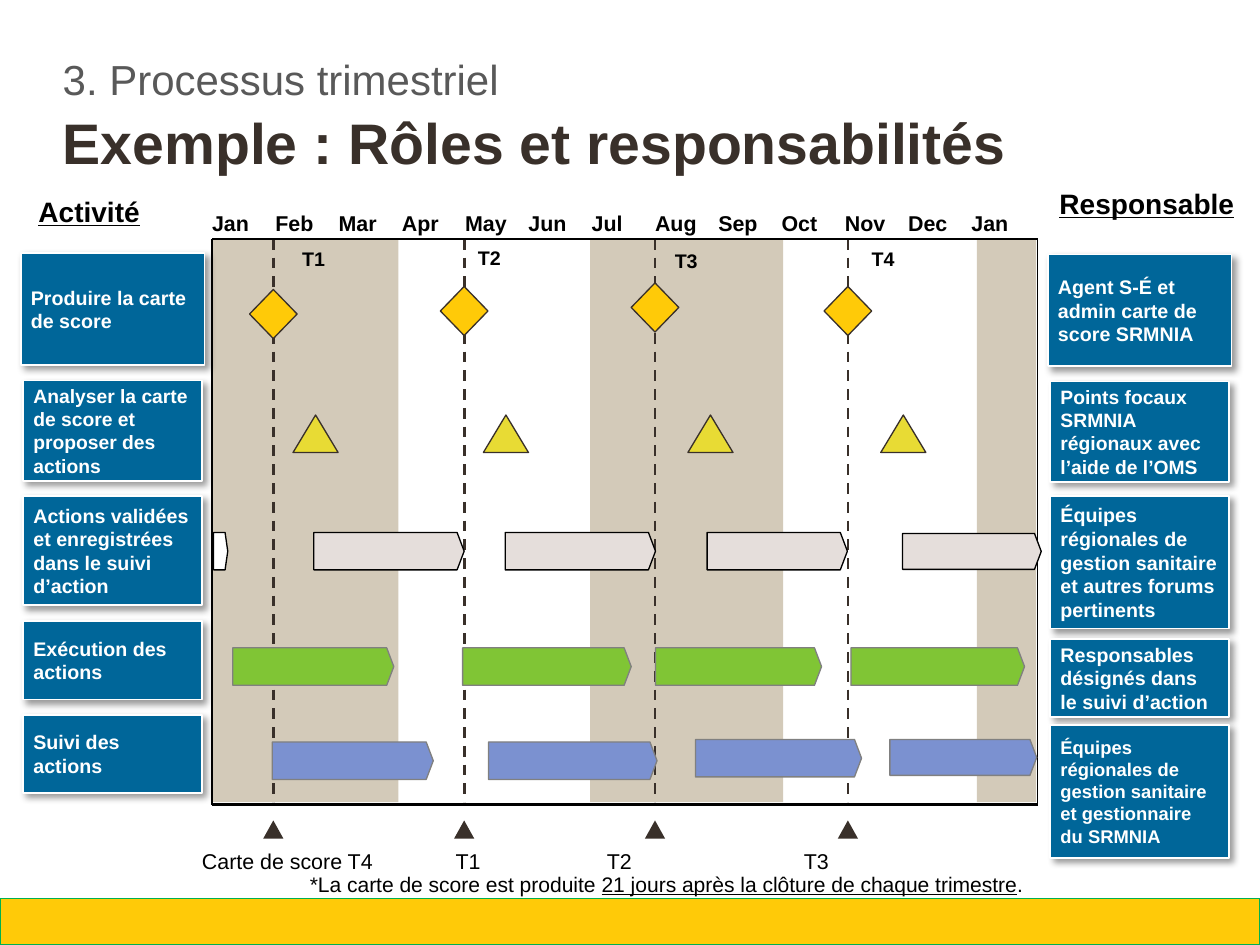
from dataclasses import dataclass
from typing import Optional

import pptx
import pptx.dml.color
import pptx.enum.dml
import pptx.enum.shapes
import pptx.enum.text
import pptx.oxml
import pptx.oxml.ns
import pptx.util
from lxml import etree

Cm = pptx.util.Cm
Pt = pptx.util.Pt
Shape = pptx.enum.shapes.MSO_SHAPE
Align = pptx.enum.text.PP_ALIGN
Anchor = pptx.enum.text.MSO_ANCHOR

FONT = "Arial"
BLACK, WHITE, DARK = "000000", "FFFFFF", "39302A"
GOLD, BLUE, BEIGE, GREY = "FFCA08", "006699", "D3CAB9", "808080"
CHART_LEFT, CHART_RIGHT, CHART_TOP, CHART_BOTTOM = 4.19, 20.5, 4.72, 15.9
MONTH_STEP = 1.25
MONTHS = "Jan Feb Mar Apr May Jun Jul Aug Sep Oct Nov Dec Jan".split()


@dataclass
class Card:
    left: float
    top: float
    width: float
    height: float
    text: str
    size: float = 11


@dataclass
class Quarter:
    name: str
    line: float
    diamond_top: float
    label_left: float
    label_top: float
    analysis_left: float


@dataclass
class Bar:
    left: float
    top: float
    width: float
    fill: str
    line: str = GREY
    height: float = 0.74


@dataclass
class Label:
    left: float
    top: float
    width: float
    height: float
    text: str
    size: float = 12
    bold: bool = False
    underline: bool = False
    color: str = BLACK
    align: Align = Align.LEFT
    anchor: Anchor = Anchor.TOP
    inset_x: float = 0
    inset_y: float = 0


CARDS = [
    Card(0.41, 5, 3.63, 2.21, "Produire la carte de score"),
    Card(0.46, 7.52, 3.53, 1.98, "Analyser la carte de score et proposer des actions", 10.8),
    Card(0.46, 9.8, 3.53, 2.16, "Actions validées et enregistrées dans le suivi d’action"),
    Card(0.46, 12.27, 3.53, 1.55, "Exécution des actions"),
    Card(0.46, 14.12, 3.53, 1.55, "Suivi des actions"),
    Card(20.7, 5.03, 3.63, 2.21, "Agent S-É et admin carte de score SRMNIA"),
    Card(20.75, 7.54, 3.53, 1.98, "Points focaux SRMNIA régionaux avec l’aide de l’OMS", 10.8),
    Card(20.75, 9.8, 3.53, 2.62,
         "Équipes régionales de gestion sanitaire et autres forums pertinents"),
    Card(20.75, 12.62, 3.53, 1.55, "Responsables désignés dans le suivi d’action"),
    Card(20.75, 14.33, 3.53, 2.62,
         "Équipes régionales de gestion sanitaire et gestionnaire du SRMNIA", 10.3),
]
QUARTERS = [
    Quarter("T1", 5.4, 5.72, 5.72, 4.75, 5.79),
    Quarter("T2", 9.17, 5.66, 9.19, 4.72, 9.55),
    Quarter("T3", 12.94, 5.59, 13.08, 4.78, 13.59),
    Quarter("T4", 16.75, 5.66, 16.97, 4.75, 17.4),
]
VALIDATED, EXECUTED, FOLLOWED = "E5DEDB", "80C535", "7B91D0"
BARS = [
    Bar(4.22, 10.52, 0.28, WHITE, BLACK),
    Bar(6.2, 10.52, 2.97, VALIDATED, BLACK),
    Bar(9.98, 10.52, 2.97, VALIDATED, BLACK),
    Bar(13.97, 10.52, 2.77, VALIDATED, BLACK),
    Bar(17.83, 10.54, 2.74, VALIDATED, BLACK, 0.71),
    Bar(4.6, 12.8, 3.18, EXECUTED),
    Bar(9.14, 12.8, 3.33, EXECUTED),
    Bar(12.95, 12.8, 3.28, EXECUTED),
    Bar(16.81, 12.8, 3.43, EXECUTED),
    Bar(5.38, 14.66, 3.18, FOLLOWED),
    Bar(9.65, 14.66, 3.33, FOLLOWED),
    Bar(13.74, 14.61, 3.28, FOLLOWED),
    Bar(17.58, 14.61, 2.9, FOLLOWED, height=0.71),
]
LABELS = [
    Label(0.76, 3.84, 3.18, 0.66, "Activité", 15.7, True, True),
    Label(20.93, 3.68, 3.6, 0.66, "Responsable", 15.7, True, True),
    Label(3.99, 16.76, 3.71, 0.51, "Carte de score T4"),
    Label(7.98, 16.76, 2.54, 0.51, "T1", align=Align.CENTER),
    Label(11.99, 16.76, 2.54, 0.51, "T2"),
    Label(15.88, 16.76, 2.54, 0.51, "T3"),
]


def rgb(color: str) -> pptx.dml.color.RGBColor:
    return pptx.dml.color.RGBColor.from_string(color)


def format_text(box, label: Label) -> None:
    frame = box.text_frame
    frame.word_wrap = True
    frame.auto_size = pptx.enum.text.MSO_AUTO_SIZE.NONE
    frame.vertical_anchor = label.anchor
    frame.margin_left = frame.margin_right = Cm(label.inset_x)
    frame.margin_top = frame.margin_bottom = Cm(label.inset_y)
    frame.text = label.text
    paragraph = frame.paragraphs[0]
    paragraph.alignment = label.align
    font = paragraph.font
    font.name, font.size, font.bold = FONT, Pt(label.size), label.bold
    if label.underline:
        font.underline = True
    font.color.rgb = rgb(label.color)


def add_label(page, label: Label):
    box = page.shapes.add_textbox(
        Cm(label.left), Cm(label.top), Cm(label.width), Cm(label.height))
    format_text(box, label)
    return box


def add_figure(page, kind: Shape, left: float, top: float, width: float, height: float,
               fill: str, line: Optional[str] = None, weight: float = 0.75):
    figure = page.shapes.add_shape(kind, Cm(left), Cm(top), Cm(width), Cm(height))
    figure.shadow.inherit = False
    figure.fill.solid()
    figure.fill.fore_color.rgb = rgb(fill)
    if line:
        figure.line.color.rgb = rgb(line)
        figure.line.width = Pt(weight)
    else:
        figure.line.fill.background()
    return figure


def add_line(page, x1: float, y1: float, x2: float, y2: float,
             color: str, weight: float, dashed: bool = False) -> None:
    line = page.shapes.add_connector(
        pptx.enum.shapes.MSO_CONNECTOR.STRAIGHT, Cm(x1), Cm(y1), Cm(x2), Cm(y2))
    line.line.color.rgb = rgb(color)
    line.line.width = Pt(weight)
    if dashed:
        line.line.dash_style = pptx.enum.dml.MSO_LINE.DASH
    etree.SubElement(line._element.spPr, pptx.oxml.ns.qn("a:effectLst"))


def add_card(page, card: Card) -> None:
    box = add_figure(page, Shape.RECTANGLE, card.left, card.top, card.width, card.height,
                     BLUE, WHITE, 1)
    format_text(box, Label(card.left, card.top, card.width, card.height, card.text, card.size,
                           True, color=WHITE, anchor=Anchor.MIDDLE, inset_x=0.2, inset_y=0.2))
    effects = box._element.spPr.find(pptx.oxml.ns.qn("a:effectLst"))
    effects.append(pptx.oxml.parse_xml(
        f'<a:outerShdw {pptx.oxml.ns.nsdecls("a")} blurRad="50800" dist="38100" dir="2700000" '
        'algn="tl" rotWithShape="0"><a:srgbClr val="000000"><a:alpha val="40000"/>'
        '</a:srgbClr></a:outerShdw>'))


def add_headings(page) -> None:
    title = page.shapes.title
    title.left, title.top, title.width, title.height = Cm(1.24), Cm(2.13), Cm(23.27), Cm(1.37)
    format_text(title, Label(1.24, 2.13, 23.27, 1.37, "Exemple\u00a0: Rôles et responsabilités",
                             32, True, color=DARK))
    section = add_label(page, Label(1.24, 1.17, 22.4, 0.91, "3. Processus trimestriel", 23.5,
                                    color="595959"))
    section.text_frame.paragraphs[0].line_spacing = 0.9


def add_calendar(page) -> None:
    for left, width in ((CHART_LEFT, 3.68), (11.66, 3.81), (19.3, 1.17)):
        add_figure(page, Shape.RECTANGLE, left, CHART_TOP, width, 11.13, BEIGE)
    for index, month in enumerate(MONTHS):
        add_label(page, Label(CHART_LEFT + index * MONTH_STEP, 4.06, 1.27, 0.69, month,
                              bold=True, anchor=Anchor.MIDDLE, inset_y=0.08))
    for x in (CHART_LEFT, CHART_RIGHT):
        add_line(page, x, CHART_TOP, x, CHART_BOTTOM, BLACK, 0.75)
    for quarter in QUARTERS:
        add_line(page, quarter.line, CHART_TOP, quarter.line, 15.85, DARK, 1.5, True)
    for y in (CHART_TOP, CHART_BOTTOM):
        add_line(page, CHART_LEFT, y, CHART_RIGHT, y, BLACK, 1.5)


def add_quarter(page, quarter: Quarter) -> None:
    add_figure(page, Shape.DIAMOND, quarter.line - 0.47, quarter.diamond_top, 0.94, 0.97,
               GOLD, DARK)
    add_figure(page, Shape.ISOSCELES_TRIANGLE, quarter.analysis_left, 8.2, 0.89, 0.74,
               "E8DB34", DARK)
    add_figure(page, Shape.ISOSCELES_TRIANGLE, quarter.line - 0.2, 16.21, 0.4, 0.36, DARK)
    add_label(page, Label(quarter.label_left, quarter.label_top, 1.27, 0.74, quarter.name, 11,
                          True, inset_x=0.25, inset_y=0.13))


def add_footnote(page) -> None:
    note = add_label(page, Label(5.87, 17.09, 18.8, 0.76, "*La carte de score est produite ",
                                 11.8, inset_x=0.25, inset_y=0.13))
    paragraph = note.text_frame.paragraphs[0]
    span = paragraph.add_run()
    span.text = "21\u00a0jours après la clôture de chaque trimestre"
    span.font.underline = True
    paragraph.add_run().text = "."


def main() -> None:
    deck = pptx.Presentation()
    deck.slide_width, deck.slide_height = Cm(24.89), Cm(18.67)
    page = deck.slides.add_slide(deck.slide_layouts[5])
    add_figure(page, Shape.RECTANGLE, 0, 17.75, 24.89, 0.92, GOLD, "00B050")
    add_headings(page)
    add_calendar(page)
    for bar in BARS:
        arrow = add_figure(page, Shape.PENTAGON, bar.left, bar.top, bar.width, bar.height,
                           bar.fill, bar.line)
        arrow.adjustments[0] = 0.188
    for quarter in QUARTERS:
        add_quarter(page, quarter)
    for card in CARDS:
        add_card(page, card)
    for label in LABELS:
        add_label(page, label)
    add_footnote(page)
    deck.save("out.pptx")


if __name__ == "__main__":
    main()
